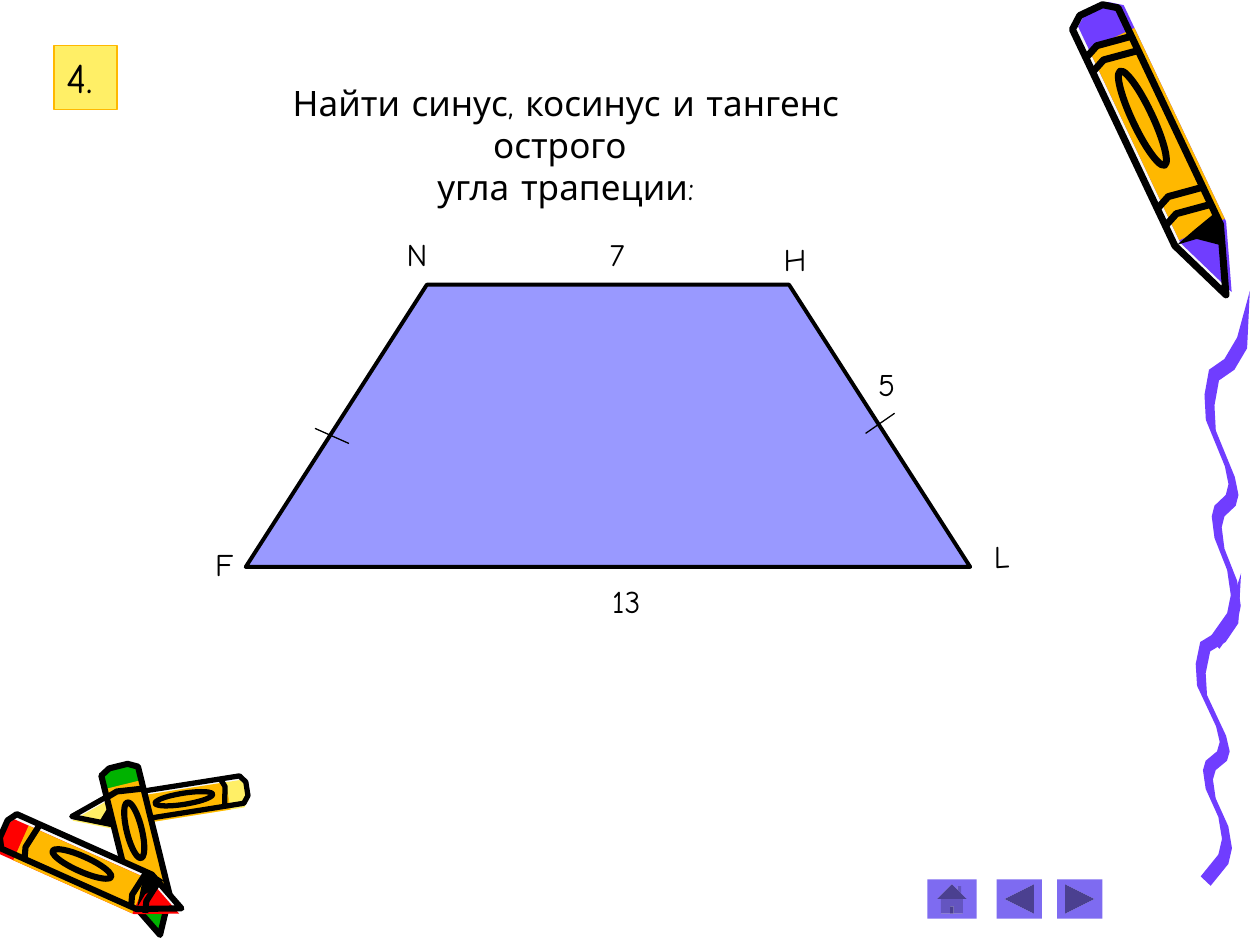
import math

from lxml import etree
from pptx import Presentation
from pptx import util as u
from pptx.dml.color import RGBColor
from pptx.enum import shapes, text

SLIDE_W, SLIDE_H = 10, 7.5
FONT = "Comic Neue"
COLORS = {"ink": "000000", "violet": "703DFF", "orange": "FFB800", "paper": "F8F8F8",
          "yellow": "FFEF66", "red": "FF0000", "green": "00B200",
          "trapezoid": "9999FF", "button": "7E6BF1"}

TASK = ["Найти синус, косинус и тангенс острого ", "угла трапеции:"]
TASK_BOX = (1.65, 0.6, 5.68, 0.77)
NUMBER, NUMBER_BOX = "4.", (0.43, 0.36, 0.5, 0.51)

TRAPEZOID_BOX = (1.95, 2.26, 5.75, 2.24)
TRAPEZOID_INSET = 0.25  # share of the base cut off at each end of the top
EQUAL_SIDE_TICKS = [(2.5, 3.4, 2.77, 3.52), (7.1, 3.28, 6.87, 3.44)]
LABELS = [("13", 4.76, 4.57, 0.47), ("L", 7.79, 4.21, 0.34), ("5", 6.87, 2.85, 0.35),
          ("7", 4.74, 1.82, 0.35), ("F", 1.61, 4.28, 0.35), ("N", 3.13, 1.82, 0.4),
          ("H", 6.12, 1.86, 0.39)]
LABEL_H = 0.4

BUTTON_TOP, BUTTON_H = 6.98, 0.31
BUTTONS = [("ACTION_BUTTON_HOME", 7.36, 0.39),
           ("ACTION_BUTTON_BACK_OR_PREVIOUS", 7.91, 0.36),
           ("ACTION_BUTTON_FORWARD_OR_NEXT", 8.39, 0.36)]

# shift moves the colour sideways off the ink outline, in half widths;
# bands are shares of the length, counted from the blunt end.
CRAYONS = [
    {"end": (1.96, 6.26), "tip": (0.57, 6.48), "width": 0.22, "color": "yellow",
     "shift": -0.3, "bands": [0.12], "ring": 0.36, "pen": 3},
    {"end": (0.94, 6.08), "tip": (1.27, 7.42), "width": 0.3, "color": "green",
     "shift": 0, "bands": [0.14], "ring": 0.38, "pen": 3.5},
    {"end": (0.03, 6.58), "tip": (1.44, 7.21), "width": 0.3, "color": "red",
     "shift": 0.3, "bands": [0.14, 0.74, 0.82], "ring": 0.44, "pen": 3.5},
    {"end": (8.66, 0.08), "tip": (9.73, 2.34), "width": 0.4, "color": "violet",
     "shift": -0.25, "bands": [0.11, 0.16, 0.64, 0.7], "ring": 0.38, "pen": 4},
]
# Crayon parts as (share of length, half widths off the axis).
OUTLINE = [(0.03, 1), (0, 0.5), (0, -0.5), (0.03, -1), (0.79, -1), (1, 0), (0.79, 1)]
WRAPPER = [(0.11, 1), (0.11, -1), (0.78, -1), (0.78, 1)]
COLLAR = [(0.75, -1), (0.86, -0.8), (0.8, 0.1), (0.79, 0.9), (0.77, 0)]
BAND = [(0.02, 1), (0, 0.4), (0.02, -1)]
RING_LENGTH, RING_WIDTH = 0.33, 0.4  # shares of the crayon's length and width

# One wave of the scribble, as shares of its box; drawn twice.
WAVE = [(1, 0), (0.72, 0.13), (0.44, 0.19), (0.1, 0.22), (0, 0.29), (0.03, 0.36),
        (0.45, 0.49), (0.53, 0.54), (0.47, 0.57), (0.22, 0.6), (0.16, 0.63),
        (0.22, 0.69), (0.5, 0.78), (0.58, 0.85), (0.5, 0.9), (0.11, 0.97)]
WAVE_THICKNESS = (0.22, 0.03)
WAVE_BOXES = [(9.49, 4.55, 0.36, 2.48), (9.56, 2.31, 0.36, 2.84)]


def rgb(name):
    return RGBColor.from_string(COLORS[name])


def inches(values):
    return [u.Inches(v) for v in values]


def paint(shape, fill=None, line=None, width=0):
    shape.shadow.inherit = False
    if fill:
        shape.fill.solid()
        shape.fill.fore_color.rgb = rgb(fill)
    else:
        shape.fill.background()
    if line:
        shape.line.color.rgb = rgb(line)
        shape.line.width = u.Pt(width)
    else:
        shape.line.fill.background()


def outline(slide, corners, close=True, **look):
    start, *others = [inches(corner) for corner in corners]
    builder = slide.shapes.build_freeform(*start)
    builder.add_line_segments(others, close=close)
    paint(builder.convert_to_shape(), **look)


def stroke(slide, ends, width):
    line = slide.shapes.add_connector(shapes.MSO_CONNECTOR.STRAIGHT, *inches(ends))
    line.line.color.rgb = rgb("ink")
    line.line.width = u.Pt(width)
    etree.SubElement(line._element.spPr,
                     "{http://schemas.openxmlformats.org/drawingml/2006/main}effectLst")


def draw_crayon(slide, end, tip, width, color, shift, bands, ring, pen):
    dx, dy = tip[0] - end[0], tip[1] - end[1]
    length = math.hypot(dx, dy)

    def place(part, along=0, aside=0):
        """Turn crayon shares into slide inches."""
        result = []
        for share, off in part:
            across = (off + aside) * width / 2 / length
            result.append((end[0] + (share + along) * dx - across * dy,
                           end[1] + (share + along) * dy + across * dx))
        return result

    outline(slide, place(OUTLINE), fill="paper")
    outline(slide, place(OUTLINE, aside=shift), fill=color)
    outline(slide, place(WRAPPER, aside=shift), fill="orange")
    outline(slide, place(COLLAR), fill="ink")
    outline(slide, place(OUTLINE), line="ink", width=pen)
    for band in bands:
        outline(slide, place(BAND, along=band), close=False, line="ink", width=pen)

    (x, y), = place([(ring, 0)])
    ring_w, ring_h = RING_LENGTH * length, RING_WIDTH * width
    oval = slide.shapes.add_shape(shapes.MSO_SHAPE.OVAL,
                                  *inches((x - ring_w / 2, y - ring_h / 2, ring_w, ring_h)))
    oval.rotation = math.degrees(math.atan2(dy, dx))
    paint(oval, line="ink", width=pen)


def draw_wave(slide, box):
    """Follow the wave down, then back up along its thicker side."""
    left, top, width, height = box
    right, down = WAVE_THICKNESS
    back = [(x + right, y + down) for x, y in reversed(WAVE[1:])]
    outline(slide, [(left + x * width, top + y * height) for x, y in WAVE + back],
            fill="violet")


def draw_trapezoid(slide):
    left, top, width, height = TRAPEZOID_BOX
    right, bottom, inset = left + width, top + height, TRAPEZOID_INSET * width
    outline(slide, [(left, bottom), (left + inset, top), (right - inset, top),
                    (right, bottom)], fill="trapezoid", line="ink", width=2.25)
    for tick in EQUAL_SIDE_TICKS:
        stroke(slide, tick, 0.75)
    for label, x, y, label_w in LABELS:
        write(slide.shapes.add_textbox(*inches((x, y, label_w, LABEL_H))), [label], 18)


def write(shape, lines, size, align=text.PP_ALIGN.LEFT, wrap=False):
    frame = shape.text_frame
    frame.text = "\n".join(lines)
    layout = {"word_wrap": wrap, "vertical_anchor": text.MSO_ANCHOR.TOP,
              "auto_size": text.MSO_AUTO_SIZE.NONE}
    for key, value in layout.items():
        setattr(frame, key, value)
    for paragraph in frame.paragraphs:
        paragraph.alignment = align
        font = paragraph.runs[0].font
        for key, value in {"name": FONT, "size": u.Pt(size)}.items():
            setattr(font, key, value)
        font.color.rgb = rgb("ink")


def main():
    deck = Presentation()
    deck.slide_width, deck.slide_height = inches((SLIDE_W, SLIDE_H))
    slide = deck.slides.add_slide(deck.slide_layouts[5])

    task = slide.shapes.title
    for side, value in zip(("left", "top", "width", "height"), inches(TASK_BOX)):
        setattr(task, side, value)
    write(task, TASK, 20, text.PP_ALIGN.CENTER, wrap=True)

    for crayon in CRAYONS:
        draw_crayon(slide, **crayon)
    for box in WAVE_BOXES:
        draw_wave(slide, box)
    draw_trapezoid(slide)

    number = slide.shapes.add_shape(shapes.MSO_SHAPE.RECTANGLE, *inches(NUMBER_BOX))
    paint(number, fill="yellow", line="orange", width=0.75)
    write(number, [NUMBER], 24)

    for kind, left, width in BUTTONS:
        button = slide.shapes.add_shape(shapes.MSO_SHAPE[kind],
                                        *inches((left, BUTTON_TOP, width, BUTTON_H)))
        paint(button, fill="button")

    deck.save("out.pptx")


if __name__ == "__main__":
    main()
